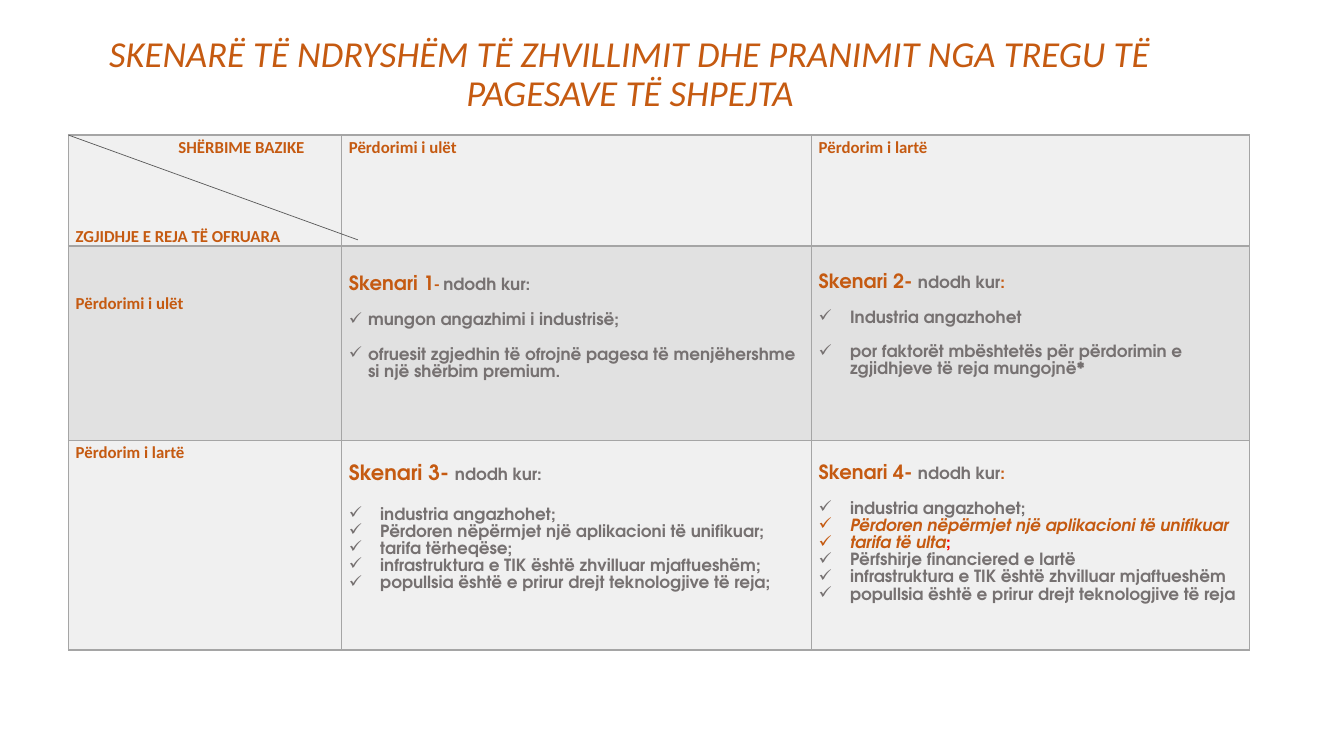
import pptx
import pptx.dml.color
import pptx.enum.shapes
import pptx.enum.text
import pptx.util
import lxml.etree
import pptx.oxml.ns

ORANGE, GRAY, RED = "C55A11", "767171", "FF0000"
BORDER, DIAGONAL, LIGHT, DARK = "A5A5A5", "595959", "F0F0F0", "E1E1E1"
BODY, HEAD = "TeX Gyre Adventor", "Calibri"


def rgb(value):
    return pptx.dml.color.RGBColor.from_string(value)


def sub(parent, tag, **attrs):
    return lxml.etree.SubElement(parent, pptx.oxml.ns.qn(tag), attrs)


def add_text(p, text, size=12, color=ORANGE, bold=True, italic=False, font=HEAD):
    r = p.add_run()
    r.text = text
    r.font.size = pptx.util.Pt(size)
    r.font.name = font
    r.font.bold = bold
    r.font.italic = italic
    r.font.color.rgb = rgb(color)


class Deck:
    """Holds the style and the current slide; lengths are percent of the slide."""

    def __init__(self):
        self.prs = pptx.Presentation()
        self.prs.slide_width = pptx.util.Inches(13.33)
        self.prs.slide_height = pptx.util.Inches(7.5)
        self.s = self.prs.slides.add_slide(self.prs.slide_layouts[6])

    def x(self, share):
        return round(self.prs.slide_width * share / 100)

    def y(self, share):
        return round(self.prs.slide_height * share / 100)

    def title(self, text, left, top, width, height):
        sp = self.s.shapes.add_textbox(self.x(left), self.y(top), self.x(width), self.y(height))
        tf = sp.text_frame
        tf.word_wrap = True
        tf.vertical_anchor = pptx.enum.text.MSO_ANCHOR.BOTTOM
        p = tf.paragraphs[0]
        p.alignment = pptx.enum.text.PP_ALIGN.CENTER
        p.line_spacing = 0.9
        add_text(p, text, size=26.1, bold=False, italic=True)

    def table(self, left, top, cols, rows):
        sp = self.s.shapes.add_table(len(rows), len(cols), self.x(left), self.y(top),
                                     self.x(sum(cols)), self.y(sum(rows)))
        table = sp.table
        table.first_row = table.horz_banding = False
        for column, width in zip(table.columns, cols):
            column.width = self.x(width)
        for row, height in zip(table.rows, rows):
            row.height = self.y(height)
        return table

    def cell(self, cell, fill, paragraphs, top=0):
        tcPr = cell._tc.get_or_add_tcPr()
        for side in ("a:lnL", "a:lnR", "a:lnT", "a:lnB"):
            ln = sub(tcPr, side, w="12700")
            sub(sub(ln, "a:solidFill"), "a:srgbClr", val=BORDER)
        cell.fill.solid()
        cell.fill.fore_color.rgb = rgb(fill)
        cell.margin_left = cell.margin_right = self.x(0.53)
        cell.margin_top, cell.margin_bottom = self.y(top), 0
        tf = cell.text_frame
        for i, (runs, form) in enumerate(paragraphs):
            p = tf.paragraphs[0] if i == 0 else tf.add_paragraph()
            self.paragraph(p, runs, **form)

    def paragraph(self, p, runs, before=0, indent=0, bullet=False):
        pPr = p._p.get_or_add_pPr()
        pPr.set("marL", str(self.x(indent)))
        pPr.set("indent", str(-self.x(indent) if bullet else 0))
        if bullet:
            sub(pPr, "a:buChar", char="✓")
        p.line_spacing = 1.1
        p.space_before = pptx.util.Pt(before)
        for text, style in runs:
            add_text(p, text, **style)

    def line(self, x1, y1, x2, y2):
        sp = self.s.shapes.add_connector(pptx.enum.shapes.MSO_CONNECTOR.STRAIGHT,
                                         self.x(x1), self.y(y1), self.x(x2), self.y(y2))
        sp.line.color.rgb = rgb(DIAGONAL)
        sp.line.width = pptx.util.Pt(0.5)
        sub(sp._element.spPr, "a:effectLst")


def label(text, **form):
    return [([(text, {})], form)]


def heading(name, *rest, size=14):
    return [([(name, dict(size=size, font=BODY))]
             + [(text, dict(color=color, font=font)) for text, color, font in rest], {})]


def bullets(*items, first=12.3, gap=0, indent=2.33):
    result = []
    for i, item in enumerate(items):
        runs = [(item, dict(color=GRAY))] if isinstance(item, str) else item
        runs = [(text, dict(style, font=BODY)) for text, style in runs]
        result.append((runs, dict(before=gap if i else first, indent=indent, bullet=True)))
    return result


def main():
    deck = Deck()
    deck.title("SKENARË TË NDRYSHËM TË ZHVILLIMIT DHE PRANIMIT NGA TREGU TË PAGESAVE TË SHPEJTA",
               7.35, 4.93, 79.07, 10.93)
    table = deck.table(5.1, 17.87, [20.33, 34.96, 32.56], [14.67, 25.73, 27.73])
    when = ("ndodh kur", GRAY, BODY)
    when_colon = ("ndodh kur:", GRAY, BODY)
    colon = (":", ORANGE, BODY)
    accent = dict(italic=True)

    scenario_1 = (heading("Skenari 1", ("- ", ORANGE, HEAD), when_colon)
                  + bullets("mungon angazhimi i industrisë;",
                            "ofruesit zgjedhin të ofrojnë pagesa të menjëhershme si një shërbim premium.",
                            gap=12.3, indent=1.43))
    scenario_2 = (heading("Skenari 2- ", when, colon)
                  + bullets("Industria angazhohet",
                            "por faktorët mbështetës për përdorimin e zgjidhjeve të reja mungojnë*",
                            gap=12.3))
    scenario_3 = (heading("Skenari 3- ", when_colon, size=15)
                  + bullets("industria angazhohet;",
                            "Përdoren nëpërmjet një aplikacioni të unifikuar;",
                            "tarifa tërheqëse;",
                            "infrastruktura e TIK është zhvilluar mjaftueshëm;",
                            "popullsia është e prirur drejt teknologjive të reja;", first=15.5))
    scenario_4 = (heading("Skenari 4- ", when, colon)
                  + bullets("industria angazhohet;",
                            [("Përdoren nëpërmjet një aplikacioni të unifikuar", accent)],
                            [("tarifa të ulta", accent), (";", dict(color=RED))],
                            "Përfshirje financiered e lartë",
                            "infrastruktura e TIK është zhvilluar mjaftueshëm",
                            "popullsia është e prirur drejt teknologjive të reja"))
    corner = (label("SHËRBIME BAZIKE", indent=7.65)
              + label("ZGJIDHJE E REJA TË OFRUARA", before=47.5))
    low, high = label("Përdorimi i ulët"), label("Përdorim i lartë")

    rows = [(LIGHT, [(corner, 0), (low, 0), (high, 0)]),
            (DARK, [(low, 6), (scenario_1, 3.47), (scenario_2, 3.47)]),
            (LIGHT, [(high, 0), (scenario_3, 3), (scenario_4, 3)])]
    for r, (fill, cells) in enumerate(rows):
        for c, (paragraphs, top) in enumerate(cells):
            deck.cell(table.cell(r, c), fill, paragraphs, top)
    deck.line(5.1, 17.87, 26.63, 31.73)
    deck.prs.save("out.pptx")


if __name__ == "__main__":
    main()
